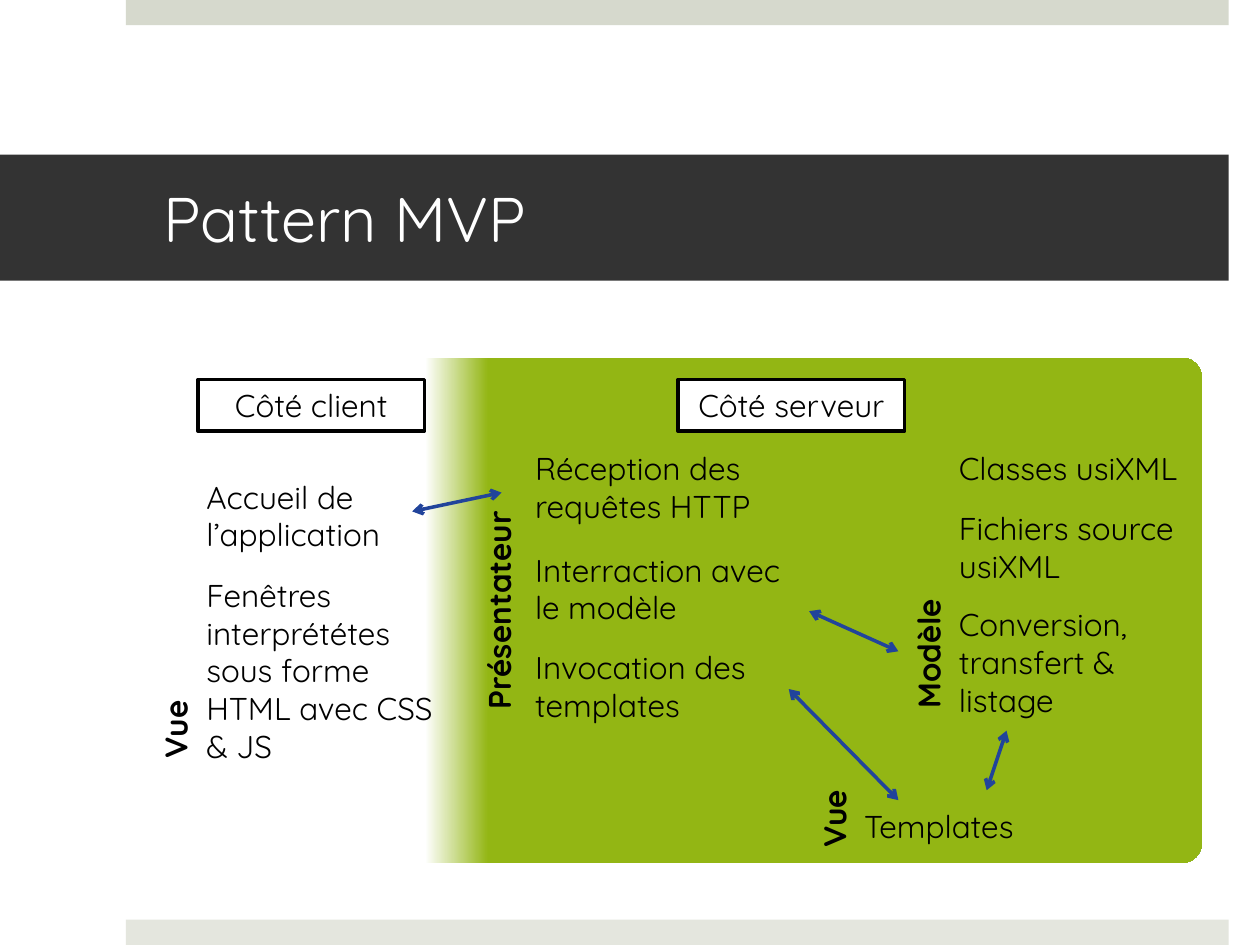
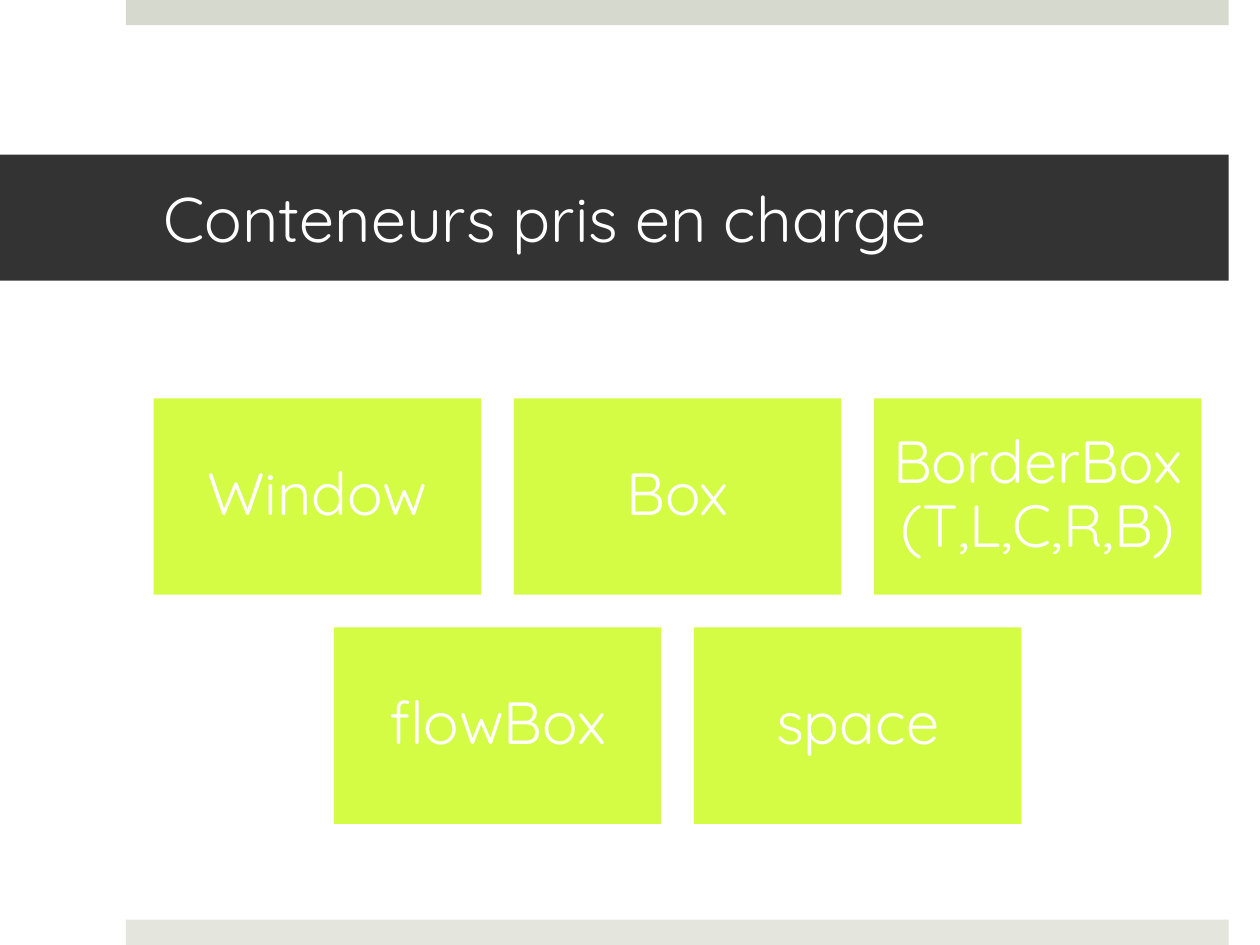
from lxml.etree import SubElement
from pptx import Presentation
from pptx.dml.color import RGBColor
from pptx.enum.shapes import MSO_CONNECTOR, MSO_SHAPE
from pptx.enum.text import MSO_ANCHOR, PP_ALIGN
from pptx.oxml.ns import qn
from pptx.util import Cm, Pt

FONT = "Quicksand"
WHITE = RGBColor(0xFF, 0xFF, 0xFF)
BLACK = RGBColor(0x00, 0x00, 0x00)
DARK = RGBColor(0x33, 0x33, 0x33)
TOP_BAND = RGBColor(0xD6, 0xD9, 0xCD)
BOTTOM_BAND = RGBColor(0xE4, 0xE6, 0xDE)
GREEN = RGBColor(0x93, 0xB6, 0x14)
LIME = RGBColor(0xD4, 0xFC, 0x45)
BLUE = RGBColor(0x21, 0x44, 0x9B)

TITLE = {"size": Pt(36)}
BODY = {"size": Pt(18)}
ROLE = {"size": Pt(18), "bold": True}
TILE = {"size": Pt(34)}


class Deck:
    def __init__(self):
        self.prs = Presentation()
        self.prs.slide_width, self.prs.slide_height = Cm(25.4), Cm(19.05)
        self.s = None

    def slide(self, title):
        """Start a slide with its two bands and its title bar."""
        self.s = self.prs.slides.add_slide(self.prs.slide_layouts[6])
        self.box(2.54, 0, 22.23, 0.51, TOP_BAND)
        self.box(2.54, 18.54, 22.23, 0.51, BOTTOM_BAND)
        bar = self.box(0, 3.12, 24.77, 2.54, DARK)
        self.fill_text(bar, title, TITLE, WHITE, margins=(3.3, 0.13, 0.76, 0.13),
                       anchor=MSO_ANCHOR.MIDDLE)

    def box(self, x, y, w, h, fill, kind=MSO_SHAPE.RECTANGLE):
        sp = self.s.shapes.add_shape(kind, Cm(x), Cm(y), Cm(w), Cm(h))
        sp.shadow.inherit = False
        sp.fill.solid()
        sp.fill.fore_color.rgb = fill
        sp.line.fill.background()
        return sp

    def fill_text(self, sp, text, font, color, margins=(0.25, 0.13, 0.25, 0.13),
                  anchor=MSO_ANCHOR.TOP, align=PP_ALIGN.LEFT, spacing=None):
        tf = sp.text_frame
        frame = {"word_wrap": True, "vertical_anchor": anchor}
        sides = ("margin_left", "margin_top", "margin_right", "margin_bottom")
        frame.update(zip(sides, map(Cm, margins)))
        p = tf.paragraphs[0]
        r = p.add_run()
        r.text = text
        r.font.color.rgb = color
        for target, values in ((tf, frame),
                               (p, {"alignment": align, "line_spacing": spacing}),
                               (r.font, {"name": FONT, **font})):
            for name, value in values.items():
                setattr(target, name, value)

    def text(self, x, y, w, h, text, font=BODY, vertical=False):
        sp = self.s.shapes.add_textbox(Cm(x), Cm(y), Cm(w), Cm(h))
        self.fill_text(sp, text, font, BLACK)
        if vertical:
            sp.text_frame._txBody.bodyPr.set("vert", "vert270")

    def label(self, x, y, text):
        sp = self.box(x, y, 4.57, 1.04, WHITE)
        sp.line.color.rgb = BLACK
        sp.line.width = Pt(2)
        self.fill_text(sp, text, BODY, BLACK, anchor=MSO_ANCHOR.MIDDLE,
                       align=PP_ALIGN.CENTER)

    def panel(self, x, y, w, h):
        """Rounded panel that fades from the client side to the server side."""
        sp = self.box(x, y, w, h, WHITE, MSO_SHAPE.ROUNDED_RECTANGLE)
        sp.adjustments[0] = 0.04
        sp.fill.gradient()
        sp.fill.gradient_angle = 0
        stops = ((0.26, WHITE), (0.32, GREEN))
        for stop, (position, color) in zip(sp.fill.gradient_stops, stops):
            stop.position = position
            stop.color.rgb = color

    def arrow(self, x1, y1, x2, y2):
        cx = self.s.shapes.add_connector(MSO_CONNECTOR.STRAIGHT,
                                         Cm(x1), Cm(y1), Cm(x2), Cm(y2))
        cx.line.color.rgb = BLUE
        cx.line.width = Pt(2)
        ln = cx.line._get_or_add_ln()
        for end in ("a:headEnd", "a:tailEnd"):
            SubElement(ln, qn(end), type="arrow")
        SubElement(cx._element.spPr, qn("a:effectLst"))

    def tile(self, x, y, w, h, text):
        sp = self.box(x, y, w, h, LIME)
        self.fill_text(sp, text, TILE, WHITE, margins=(0.36,) * 4,
                       anchor=MSO_ANCHOR.MIDDLE, align=PP_ALIGN.CENTER, spacing=0.9)


def pattern_slide(deck):
    deck.slide("Pattern MVP")
    deck.panel(3.07, 7.21, 21.16, 10.19)
    deck.label(3.99, 7.65, "Côté client")
    deck.label(13.67, 7.65, "Côté serveur")

    # Columns of tasks: left, width, then (top, height, text)
    columns = (
        (3.91, 5.16, ((9.5, 1.8, "Accueil de l’application"),
                      (11.48, 4.11, "Fenêtres interprététes sous forme "
                                    "HTML avec CSS & JS"))),
        (10.54, 5.69, ((8.92, 1.8, "Réception des requêtes HTTP"),
                       (10.97, 1.8, "Interraction avec le modèle"),
                       (12.93, 1.8, "Invocation des templates"))),
        (19.08, 5.69, ((8.92, 1.02, "Classes usiXML"),
                       (10.13, 1.8, "Fichiers source usiXML"),
                       (12.07, 2.57, "Conversion, transfert & listage"))),
        (17.17, 3.78, ((16.13, 1.02, "Templates"),)),
    )
    for x, w, tasks in columns:
        for y, h, task in tasks:
            deck.text(x, y, w, h, task)

    # Roles, read upwards
    for x, y, h, role in ((2.9, 9.58, 5.84, "Vue"),
                          (9.42, 8.99, 5.44, "Présentateur"),
                          (18.08, 11.18, 3.23, "Modèle"),
                          (16.18, 15.44, 1.78, "Vue")):
        deck.text(x, y, 1.27, h, role, ROLE, vertical=True)

    # Exchanges between roles
    for ends in ((20.29, 14.73, 19.89, 15.93), (18.11, 16.13, 15.9, 13.89),
                 (18.11, 13.13, 16.31, 12.32), (10.11, 9.93, 8.31, 10.31)):
        deck.arrow(*ends)


def containers_slide(deck):
    deck.slide("Conteneurs pris en charge")
    rows = (("Window", "Box", "BorderBox (T,L,C,R,B)"), ("flowBox", "space"))
    w, h, gap, center, top = 6.6, 3.96, 0.66, 13.66, 8.03
    for i, row in enumerate(rows):
        left = center - (len(row) * (w + gap) - gap) / 2
        for j, name in enumerate(row):
            deck.tile(left + j * (w + gap), top + i * (h + gap), w, h, name)


def main():
    deck = Deck()
    pattern_slide(deck)
    containers_slide(deck)
    deck.prs.save("out.pptx")


if __name__ == "__main__":
    main()
